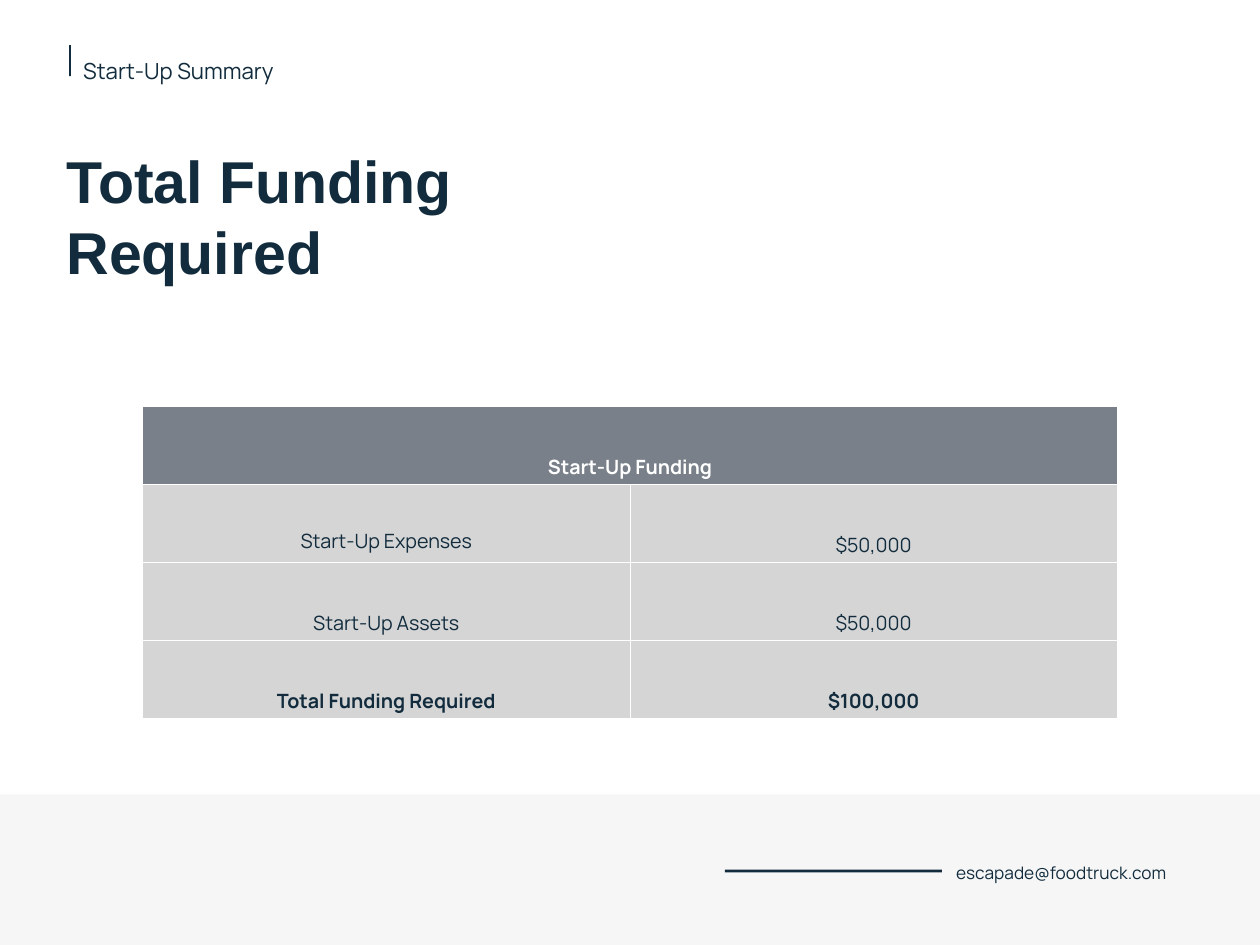
import pptx
import pptx.dml.color
import pptx.enum.shapes
import pptx.enum.text
import pptx.oxml
import pptx.oxml.ns
import pptx.util
from pptx.util import Inches

COLORS = {
    "navy": "122C3D",
    "white": "FFFFFF",
    "header": "798089",
    "cell": "D5D5D5",
    "band": "5E5E5E",
}
FUNDING = [
    ("Start-Up Expenses", "$50,000"),
    ("Start-Up Assets", "$50,000"),
    ("Total Funding Required", "$100,000"),
]
MIDDLE = pptx.enum.text.MSO_ANCHOR.MIDDLE
CENTER = pptx.enum.text.PP_ALIGN.CENTER


def rgb(name):
    return pptx.dml.color.RGBColor.from_string(COLORS[name])


def write_text(frame, text, size=16, font="Manrope", color="navy", bold=False,
               align=None, spacing=None):
    """Fill a text frame, one paragraph for each line of text."""
    for index, line in enumerate(text.split("\n")):
        paragraph = frame.add_paragraph() if index else frame.paragraphs[0]
        paragraph.alignment = align
        paragraph.line_spacing = spacing
        run = paragraph.add_run()
        run.text = line
        run.font.size = pptx.util.Pt(size)
        run.font.name = font
        run.font.bold = bold
        run.font.color.rgb = rgb(color)


class SlideBuilder:
    cell_margin = Inches(0.06)
    text_margin = Inches(0.03)
    border_points = 0.75

    def __init__(self, slide):
        self.slide = slide

    def set_margins(self, target, margin):
        target.margin_left = target.margin_right = margin
        target.margin_top = target.margin_bottom = margin

    def rectangle(self, left, top, width, height, color, opacity=None):
        shape = self.slide.shapes.add_shape(
            pptx.enum.shapes.MSO_SHAPE.RECTANGLE,
            Inches(left), Inches(top), Inches(width), Inches(height))
        shape.shadow.inherit = False
        shape.line.fill.background()
        shape.fill.solid()
        shape.fill.fore_color.rgb = rgb(color)
        if opacity is not None:
            fill_color = shape.fill._xPr.find(".//" + pptx.oxml.ns.qn("a:srgbClr"))
            fill_color.append(pptx.oxml.parse_xml(
                f'<a:alpha {pptx.oxml.ns.nsdecls("a")} val="{opacity * 1000}"/>'))

    def text(self, left, top, width, height, text, anchor=None, **style):
        box = self.slide.shapes.add_textbox(
            Inches(left), Inches(top), Inches(width), Inches(height))
        frame = box.text_frame
        frame.word_wrap = True
        frame.vertical_anchor = anchor
        self.set_margins(frame, self.text_margin)
        write_text(frame, text, **style)

    def cell(self, cell, text, fill, **style):
        self.set_margins(cell, self.cell_margin)
        cell.vertical_anchor = MIDDLE
        write_text(cell.text_frame, text, align=CENTER, **style)
        self.style_cell(cell, fill)

    def style_cell(self, cell, fill):
        cell.fill.solid()
        cell.fill.fore_color.rgb = rgb(fill)
        properties = cell._tc.get_or_add_tcPr()
        width = pptx.util.Pt(self.border_points)
        for position, side in enumerate(("lnL", "lnR", "lnT", "lnB")):
            properties.insert(position, pptx.oxml.parse_xml(
                f'<a:{side} {pptx.oxml.ns.nsdecls("a")} w="{width}"><a:solidFill>'
                f'<a:srgbClr val="{COLORS["white"]}"/></a:solidFill></a:{side}>'))

    def funding_table(self, left, top, column_width, row_height, heading, rows):
        row_count = len(rows) + 1
        table = self.slide.shapes.add_table(
            row_count, 2, Inches(left), Inches(top),
            Inches(2 * column_width), Inches(row_count * row_height)).table
        for column in table.columns:
            column.width = Inches(column_width)
        for row in table.rows:
            row.height = Inches(row_height)

        # Heading across both columns
        table.cell(0, 0).merge(table.cell(0, 1))
        self.cell(table.cell(0, 0), heading, "header", color="white",
                  bold=True, spacing=2.56)
        self.style_cell(table.cell(0, 1), "header")

        # Amounts, with the total in bold
        for row_index, values in enumerate(rows, start=1):
            for column_index, value in enumerate(values):
                first_cell = (row_index, column_index) == (1, 0)
                self.cell(table.cell(row_index, column_index), value, "cell",
                          bold=row_index == len(rows),
                          spacing=2.31 if first_cell else 2.56)


def main():
    presentation = pptx.Presentation()
    presentation.slide_width = Inches(14.22)
    presentation.slide_height = Inches(10.67)
    slide = presentation.slides.add_slide(presentation.slide_layouts[6])
    builder = SlideBuilder(slide)

    # Section label and heading
    builder.rectangle(0.78, 0.51, 0.02, 0.35, "navy")
    builder.text(0.91, 0.47, 2.53, 0.43, "Start-Up Summary", size=18, spacing=1.5)
    builder.text(0.72, 1.61, 7.03, 1.65, "Total Funding\nRequired",
                 anchor=MIDDLE, size=48, font="Arial", bold=True)

    # Funding table
    builder.funding_table(1.61, 4.59, 5.5, 0.88, "Start-Up Funding", FUNDING)

    # Footer band with contact
    builder.rectangle(0, 8.97, 14.22, 1.7, "band", opacity=5)
    builder.rectangle(8.18, 9.82, 2.45, 0.03, "navy")
    builder.text(10.76, 9.66, 3.4, 0.43, "escapade@foodtruck.com",
                 size=14, spacing=1.2)

    presentation.save("out.pptx")


if __name__ == "__main__":
    main()
